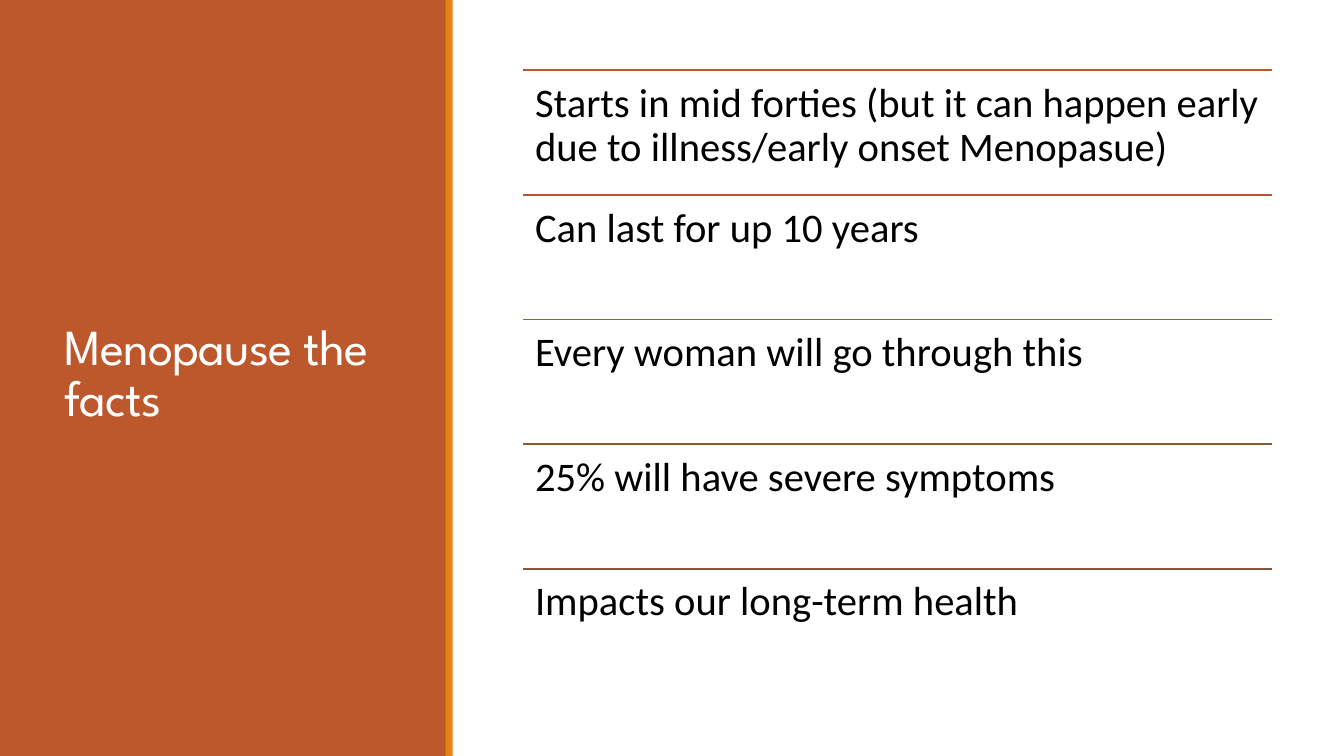
from lxml import etree
from pptx import Presentation
from pptx.dml.color import RGBColor
from pptx.enum import shapes, text
from pptx.oxml import ns
from pptx.util import Pt

# Content
TITLE = "Menopause the facts"
RUST = RGBColor(0xBD, 0x58, 0x2C)
ORANGE = RGBColor(0xE4, 0x83, 0x12)
WHITE = RGBColor(0xFF, 0xFF, 0xFF)
BLACK = RGBColor(0, 0, 0)
FACTS = [
    ("Starts in mid forties (but it can happen early due to illness/early onset Menopasue)", RUST),
    ("Can last for up 10 years", RGBColor(0xAE, 0x58, 0x32)),
    ("Every woman will go through this", RGBColor(0xA0, 0x58, 0x37)),
    ("25% will have severe symptoms", RGBColor(0x93, 0x57, 0x3C)),
    ("Impacts our long-term health", RGBColor(0x86, 0x56, 0x40)),
]
TITLE_FORMAT = {"name": "League Spartan", "size": Pt(36)}
FACT_FORMAT = {"name": "Calibri", "size": Pt(29)}

# Layout, in points
WIDTH, HEIGHT = 960, 540
BANDS = [(0, 319, RUST), (318.3, 5, ORANGE)]
LIST_LEFT, LIST_TOP, LIST_WIDTH, ROW_HEIGHT = 373.5, 50.2, 535, 89
FACT_INSET = 8.7

presentation = Presentation()
presentation.slide_width, presentation.slide_height = Pt(WIDTH), Pt(HEIGHT)
slide = presentation.slides.add_slide(presentation.slide_layouts[6])


def add_text(box, wording, formats, color, spacing, frame_formats):
    shape = slide.shapes.add_textbox(*map(Pt, box))
    frame = shape.text_frame
    frame.word_wrap = True
    for name, value in frame_formats.items():
        setattr(frame, name, value)
    paragraph = frame.paragraphs[0]
    paragraph.line_spacing = spacing
    run = paragraph.add_run()
    run.text = wording
    for name, value in formats.items():
        setattr(run.font, name, value)
    run.font.color.rgb = color
    return run


# Side panel and its edge
for left, width, color in BANDS:
    band = slide.shapes.add_shape(shapes.MSO_SHAPE.RECTANGLE, Pt(left), 0, Pt(width), Pt(HEIGHT))
    band.shadow.inherit = False
    band.fill.solid()
    band.fill.fore_color.rgb = color
    band.line.fill.background()

# Title, with slightly tightened letters
title = add_text((38.9, 41, 242.6, 454.3), TITLE, TITLE_FORMAT, WHITE, 0.85,
                 {"vertical_anchor": text.MSO_ANCHOR.MIDDLE})
title.font._element.set("spc", "-50")

# Facts, each below a rule
fact_frame = {f"margin_{side}": Pt(FACT_INSET) for side in ("left", "top", "right", "bottom")}
for row, (fact, color) in enumerate(FACTS):
    top = LIST_TOP + row * ROW_HEIGHT
    rule = slide.shapes.add_connector(shapes.MSO_CONNECTOR.STRAIGHT, Pt(LIST_LEFT), Pt(top),
                                      Pt(LIST_LEFT + LIST_WIDTH), Pt(top))
    rule.line.color.rgb = color
    rule.line.width = Pt(1.25)
    etree.SubElement(rule._element.spPr, ns.qn("a:effectLst"))
    add_text((LIST_LEFT, top, LIST_WIDTH, ROW_HEIGHT), fact, FACT_FORMAT, BLACK, 0.9, fact_frame)

presentation.save("out.pptx")
